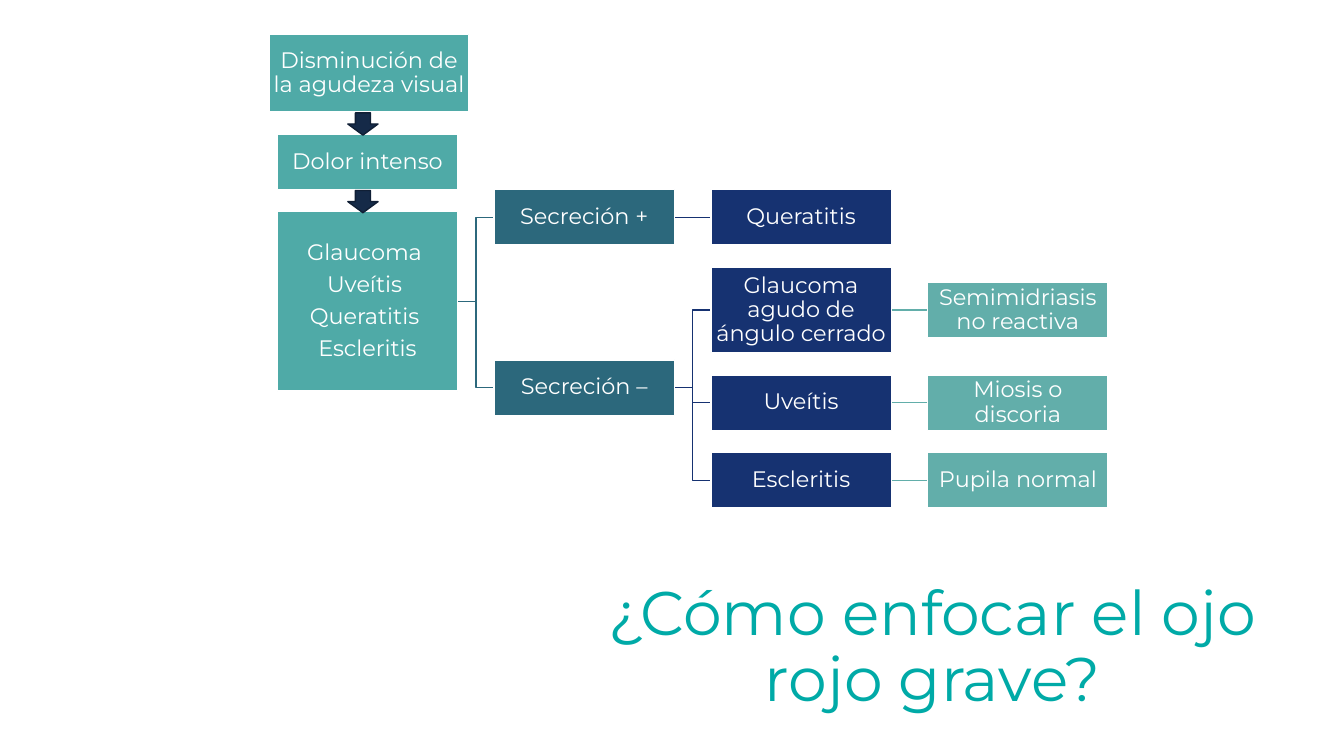
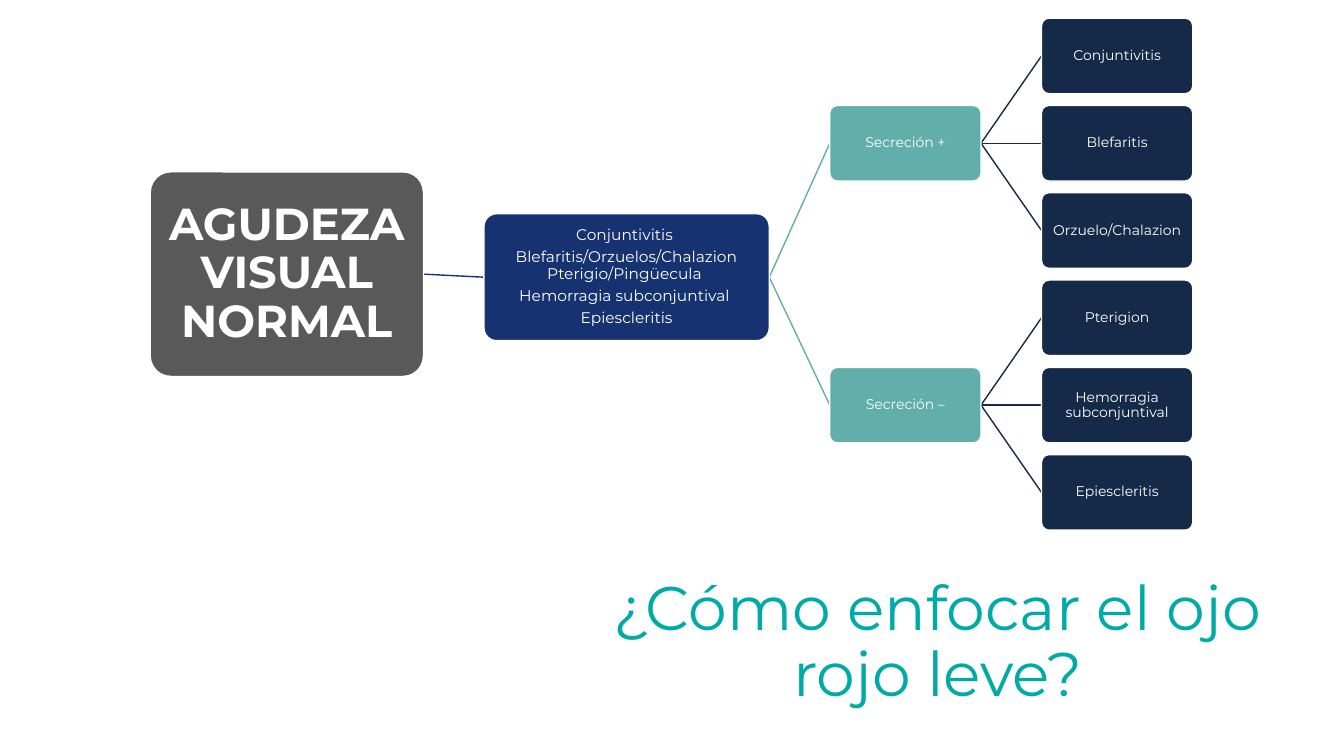
from dataclasses import dataclass

from lxml.etree import SubElement
from pptx import Presentation
from pptx.dml.color import RGBColor
from pptx.enum.shapes import MSO_CONNECTOR as Link, MSO_SHAPE as Preset
from pptx.enum.text import MSO_ANCHOR as Anchor, PP_ALIGN as Align
from pptx.oxml.ns import qn
from pptx.util import Inches, Pt


@dataclass(frozen=True)
class Theme:
    font: str = "Montserrat"
    white: str = "FFFFFF"
    title: str = "00AAA7"
    teal: str = "4FAAA7"
    sage: str = "62AEAA"
    petrol: str = "2C687C"
    navy: str = "163271"
    ink: str = "152A48"
    ink_edge: str = "101F35"
    gray: str = "595959"
    title_size: int = 44
    headline_size: int = 32
    step_size: int = 16
    list_size: int = 11
    leaf_size: int = 10
    line_width: int = 1


@dataclass(frozen=True)
class Box:
    left: float
    top: float
    width: float
    height: float

    @property
    def middle(self):
        return self.top + self.height / 2

    def inches(self):
        return [Inches(n) for n in (self.left, self.top, self.width, self.height)]


THEME = Theme()
SLIDE_WIDTH, SLIDE_HEIGHT = 13.33, 7.5
TITLE_SIZE = (7.38, 1.45)
LEFT, RIGHT = 1, 3


def color(value):
    return RGBColor.from_string(value)


def set_all(target, values):
    for name, value in values.items():
        setattr(target, name, value)


def write(shape, lines, size, ink, bold=False, inset=None, gap=0):
    """Centred text, one paragraph per line."""
    frame = shape.text_frame
    set_all(frame, {"word_wrap": True, "vertical_anchor": Anchor.MIDDLE})
    if inset is not None:
        sides = ("left", "top", "right", "bottom")
        set_all(frame, {f"margin_{side}": Inches(inset) for side in sides})
    for index, line in enumerate(lines):
        paragraph = frame.paragraphs[0] if index == 0 else frame.add_paragraph()
        paragraph.text = line
        set_all(paragraph, {"alignment": Align.CENTER, "line_spacing": 0.9,
                            "space_after": Pt(size * gap)})
        set_all(paragraph.font, {"name": THEME.font, "size": Pt(size), "bold": bold})
        paragraph.font.color.rgb = color(ink)


def add_block(slide, preset, box, fill, edge):
    shape = slide.shapes.add_shape(preset, *box.inches())
    shape.shadow.inherit = False
    shape.fill.solid()
    shape.fill.fore_color.rgb = color(fill)
    shape.line.color.rgb = color(edge)
    shape.line.width = Pt(THEME.line_width)
    return shape


def add_node(slide, box, lines, fill, size, rounded=False, bold=False, inset=0.01):
    preset = Preset.ROUNDED_RECTANGLE if rounded else Preset.RECTANGLE
    shape = add_block(slide, preset, box, fill, THEME.white)
    if rounded:
        shape.adjustments[0] = 0.1
    write(shape, lines, size, THEME.white, bold, inset, gap=0.35)
    return shape


def link(slide, parent, child, ink, kind=Link.STRAIGHT):
    """Join two nodes behind the blocks."""
    connector = slide.shapes.add_connector(kind, 0, 0, 0, 0)
    connector.begin_connect(parent, RIGHT)
    connector.end_connect(child, LEFT)
    connector.line.color.rgb = color(ink)
    connector.line.width = Pt(THEME.line_width)
    element = connector._element
    SubElement(element.spPr, qn("a:effectLst"))
    element.getparent().insert(2, element)


def add_title(slide, left, top, text):
    box = Box(left, top, *TITLE_SIZE)
    shape = slide.shapes.add_textbox(*box.inches())
    write(shape, [text], THEME.title_size, THEME.title)


def stack(left, top, width, heights, gap):
    """Boxes one below the other with equal gaps."""
    boxes = []
    for height in heights:
        boxes.append(Box(left, top, width, height))
        top += height + gap
    return boxes


def severe_tree(slide, area):
    """Square blocks in four equal columns, joined by elbows."""
    row, gap, column_gap = 0.55, 0.22, 0.36
    width = (area.width - 3 * column_gap) / 4
    lefts = [area.left + i * (width + column_gap) for i in range(4)]

    def node(box, lines, fill):
        return add_node(slide, box, lines, fill, THEME.step_size)

    def beside(box, column):
        return Box(lefts[column], box.middle - row / 2, width, row)

    # Steps from top to bottom
    first, pain, causes = stack(lefts[0], area.top, width, (0.77, row, 1.78), gap)
    wide = Box(first.left - 0.08, first.top, width + 0.19, first.height)
    node(wide, ["Disminución de la agudeza visual"], THEME.teal)
    node(pain, ["Dolor intenso"], THEME.teal)
    root = node(causes, ["Glaucoma ", "Uveítis ", "Queratitis ", "Escleritis"], THEME.teal)

    # Diagnoses, signs and the two branches
    diagnoses = stack(lefts[2], area.top + 1.54, width, (row, 0.85, row, row), gap)
    branches = [Box(lefts[1], top, width, row)
                for top in (diagnoses[0].top, diagnoses[0].top + 1.69)]
    plus, minus = [node(box, [text], THEME.petrol)
                   for box, text in zip(branches, ("Secreción +", "Secreción –"))]
    for branch in (plus, minus):
        link(slide, root, branch, THEME.petrol, Link.ELBOW)
    content = (
        (plus, "Queratitis", None),
        (minus, "Glaucoma agudo de ángulo cerrado", "Semimidriasis no reactiva"),
        (minus, "Uveítis", "Miosis o discoria"),
        (minus, "Escleritis", "Pupila normal"),
    )
    for box, (branch, name, sign) in zip(diagnoses, content):
        diagnosis = node(box, [name], THEME.navy)
        kind = Link.STRAIGHT if branch is plus else Link.ELBOW
        link(slide, branch, diagnosis, THEME.navy, kind)
        if sign:
            link(slide, diagnosis, node(beside(box, 3), [sign], THEME.sage), THEME.sage)

    # Arrows in the gaps between the steps
    for step in (first, pain):
        arrow = Box(area.left + 0.7, step.top + step.height + 0.01, 0.3, gap)
        add_block(slide, Preset.DOWN_ARROW, arrow, THEME.ink, THEME.ink_edge)


def mild_tree(slide, area):
    """Rounded blocks in four columns, joined by straight lines."""
    gap, leaf_height = 0.6, 0.75
    widths = (2.71, 2.83, 1.5, 1.5)
    lefts = [area.left + sum(widths[:i]) + i * gap for i in range(4)]
    pitch = (area.height - leaf_height) / 5

    def node(column, middle, height, lines, fill, size, **options):
        box = Box(lefts[column], middle - height / 2, widths[column], height)
        return add_node(slide, box, lines, fill, size, rounded=True, **options)

    # Starting point and its causes
    center = area.middle
    start = node(0, center, 2.03, ["AGUDEZA VISUAL NORMAL"], THEME.gray,
                 THEME.headline_size, bold=True, inset=0.02)
    causes = node(1, center + 0.03, 1.26,
                  ["Conjuntivitis ", "Blefaritis/Orzuelos/Chalazion Pterigio/Pingüecula ",
                   "Hemorragia subconjuntival ", "Epiescleritis"],
                  THEME.navy, THEME.list_size)
    link(slide, start, causes, THEME.navy)

    # Branches, each at the middle of its three leaves
    branches = {
        "Secreción +": ("Conjuntivitis", "Blefaritis", "Orzuelo/Chalazion"),
        "Secreción –": ("Pterigion", "Hemorragia subconjuntival", "Epiescleritis"),
    }
    for group, (name, leaves) in enumerate(branches.items()):
        middles = [area.top + leaf_height / 2 + (3 * group + i) * pitch for i in range(3)]
        branch = node(2, middles[1], leaf_height, [name], THEME.sage, THEME.leaf_size)
        link(slide, causes, branch, THEME.sage)
        for middle, text in zip(middles, leaves):
            leaf = node(3, middle, leaf_height, [text], THEME.ink, THEME.leaf_size)
            link(slide, branch, leaf, THEME.ink)


def main():
    presentation = Presentation()
    set_all(presentation, {"slide_width": Inches(SLIDE_WIDTH),
                           "slide_height": Inches(SLIDE_HEIGHT)})
    slides = (
        (severe_tree, Box(2.75, 0.34, 8.24, 4.7), (5.56, 5.71),
         "¿Cómo enfocar el ojo rojo grave?"),
        (mild_tree, Box(1.49, 0.18, 10.34, 5.08), (5.61, 5.66),
         "¿Cómo enfocar el ojo rojo leve?"),
    )
    for draw_tree, area, corner, title in slides:
        slide = presentation.slides.add_slide(presentation.slide_layouts[6])
        add_title(slide, *corner, title)
        draw_tree(slide, area)
    presentation.save("out.pptx")


if __name__ == "__main__":
    main()
